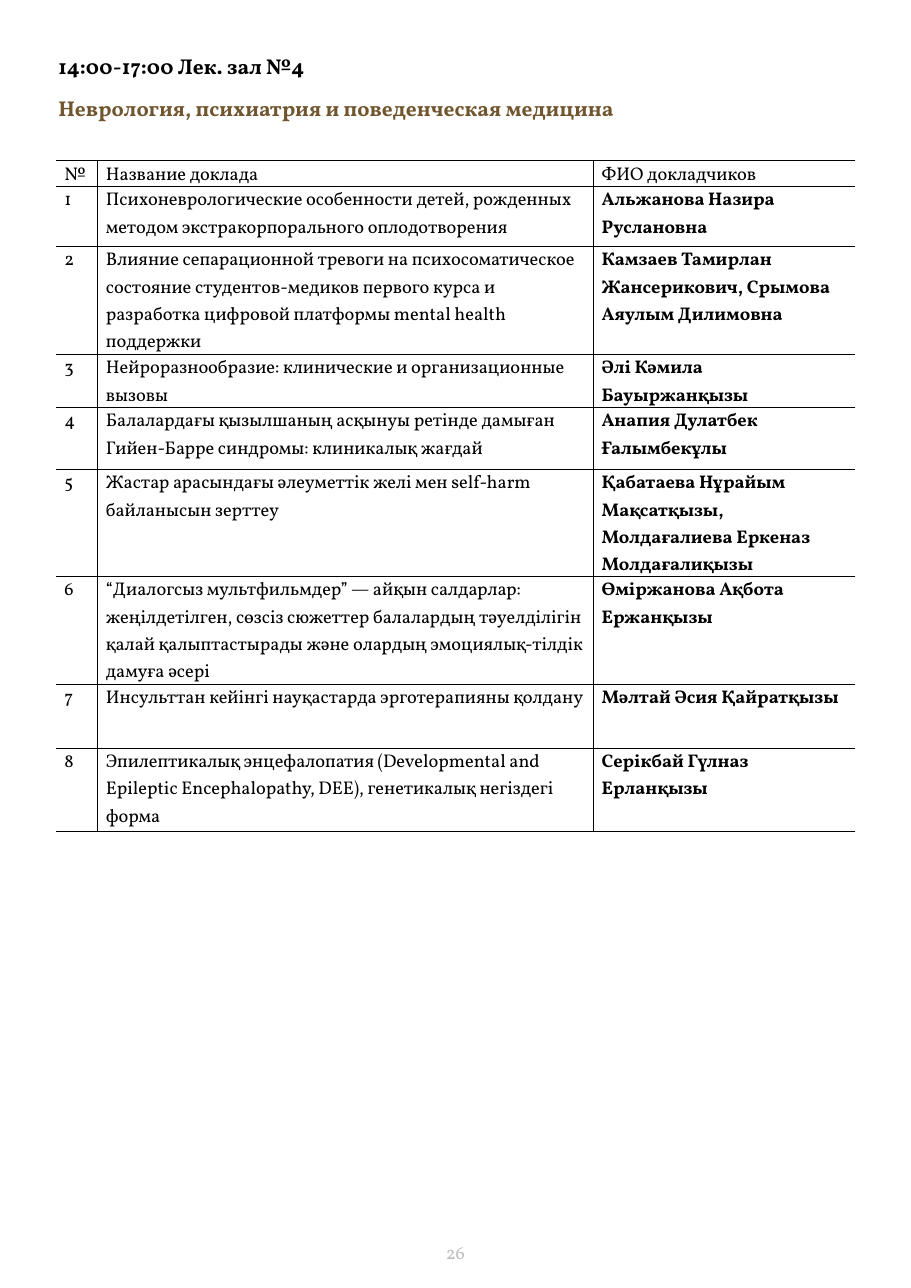
from dataclasses import dataclass

from lxml.etree import SubElement
from pptx import Presentation
from pptx.dml.color import RGBColor as Color
from pptx.enum.text import MSO_ANCHOR as Anchor, PP_ALIGN as Align
from pptx.oxml.ns import qn
from pptx.util import Pt


@dataclass(frozen=True)
class Theme:
    font: str = "Vollkorn"
    ink: str = "000000"
    paper: str = "FFFFFF"
    brown: str = "70552E"
    grey: str = "BFBFBF"
    heading_size: float = 14
    text_size: float = 12
    rule_width: float = 0.75
    hidden_width: float = 1


@dataclass(frozen=True)
class Talk:
    number: str
    topic: str
    speakers: str
    height: float


THEME = Theme()
LEFT, WIDTH, TABLE_TOP = 36.7, 522, 35.3
COLUMN_WIDTHS = [27.1, 324, 170.9]
SESSION_HEIGHT = 69.8

SESSION = [
    ("14:00-17:00 Лек. зал №4", THEME.ink),
    ("Неврология, психиатрия и поведенческая медицина", THEME.brown),
]
COLUMN_TITLES = Talk("№", "Название доклада", "ФИО докладчиков", 17)
TALKS = [
    Talk("1", "Психоневрологические особенности детей, рожденных методом "
         "экстракорпорального оплодотворения", "Альжанова Назира Руслановна", 39.2),
    Talk("2", "Влияние сепарационной тревоги на психосоматическое состояние "
         "студентов-медиков первого курса и разработка цифровой платформы mental health "
         "поддержки", "Камзаев Тамирлан Жансерикович, Срымова Аяулым Дилимовна", 70.6),
    Talk("3", "Нейроразнообразие: клинические и организационные вызовы",
         "Әлі Кәмила Бауыржанқызы", 34.6),
    Talk("4", "Балалардағы қызылшаның асқынуы ретінде дамыған Гийен-Барре синдромы: "
         "клиникалық жағдай", "Анапия Дулатбек Ғалымбекұлы", 40.5),
    Talk("5", "Жастар арасындағы әлеуметтік желі мен self-harm байланысын зерттеу",
         "Қабатаева Нұрайым Мақсатқызы, Молдағалиева Еркеназ Молдағалиқызы", 69.9),
    Talk("6", "“Диалогсыз мультфильмдер” — айқын салдарлар: жеңілдетілген, сөзсіз "
         "сюжеттер балалардың тәуелділігін қалай қалыптастырады және олардың "
         "эмоциялық-тілдік дамуға әсері", "Өміржанова Ақбота Ержанқызы", 70.6),
    Talk("7", "Инсульттан кейінгі науқастарда эрготерапияны қолдану",
         "Мәлтай Әсия Қайратқызы", 41.8),
    Talk("8", "Эпилептикалық энцефалопатия (Developmental and Epileptic "
         "Encephalopathy, DEE), генетикалық негіздегі форма",
         "Серікбай Гүлназ Ерланқызы", 54.2),
]


def apply(target, values: dict) -> None:
    for name, value in values.items():
        setattr(target, name, value)


def write(paragraph, text: str, size: float, color: str, bold: bool = False,
          **layout) -> None:
    apply(paragraph, layout)
    run = paragraph.add_run()
    run.text = text
    apply(run.font, {"name": THEME.font, "size": Pt(size), "bold": bold})
    run.font.color.rgb = Color.from_string(color)


def set_borders(cell, ruled_sides: str) -> None:
    """Rule the named sides in ink and hide the others."""
    properties = cell._tc.get_or_add_tcPr()
    for side in "LRTB":
        ruled = side in ruled_sides
        width = THEME.rule_width if ruled else THEME.hidden_width
        line = SubElement(properties, qn(f"a:ln{side}"), w=str(Pt(width)))
        fill = SubElement(line, qn("a:solidFill"))
        SubElement(fill, qn("a:srgbClr"), val=THEME.ink if ruled else THEME.paper)


def format_cell(cell, ruled_sides: str, side_margin: float) -> None:
    apply(cell, {"margin_left": Pt(side_margin), "margin_right": Pt(side_margin),
                 "margin_top": 0, "margin_bottom": 0, "vertical_anchor": Anchor.TOP})
    set_borders(cell, ruled_sides)
    cell.fill.background()


def add_programme(slide) -> None:
    rows = [COLUMN_TITLES, *TALKS]
    heights = [SESSION_HEIGHT, *(row.height for row in rows)]
    table = slide.shapes.add_table(
        len(heights), len(COLUMN_WIDTHS), Pt(LEFT), Pt(TABLE_TOP),
        Pt(WIDTH), Pt(sum(heights))).table
    apply(table, {"first_row": False, "horz_banding": False})
    for column, width in zip(table.columns, COLUMN_WIDTHS):
        column.width = Pt(width)
    for row, height in zip(table.rows, heights):
        row.height = Pt(height)

    # Session heading across all columns
    for cell in table.rows[0].cells:
        format_cell(cell, "B", 1.4)
    heading = table.cell(0, 0)
    heading.merge(table.cell(0, len(COLUMN_WIDTHS) - 1))
    frame = heading.text_frame
    write(frame.paragraphs[0], *SESSION[0][:1], THEME.heading_size, SESSION[0][1], True)
    for text, color in SESSION[1:]:
        write(frame.add_paragraph(), text, THEME.heading_size, color, True,
              space_before=Pt(8))

    # Column titles and talks, open at the outer sides
    for row_index, row in enumerate(rows, start=1):
        texts = (row.number, row.topic, row.speakers)
        for column_index, (text, sides) in enumerate(zip(texts, ("RTB", "LRTB", "LTB"))):
            cell = table.cell(row_index, column_index)
            format_cell(cell, sides, 5.4)
            is_speaker = column_index == 2 and row is not COLUMN_TITLES
            write(cell.text_frame.paragraphs[0], text, THEME.text_size, THEME.ink,
                  is_speaker, line_spacing=1.07)


def add_page_number(slide, number: str) -> None:
    frame = slide.shapes.add_textbox(Pt(LEFT), Pt(810), Pt(WIDTH), Pt(19.4)).text_frame
    apply(frame, {"word_wrap": True, "margin_left": Pt(7.2), "margin_right": Pt(7.2),
                  "margin_top": Pt(3.6), "margin_bottom": Pt(3.6)})
    write(frame.paragraphs[0], number, THEME.text_size, THEME.grey,
          alignment=Align.CENTER, line_spacing=0.85)


def main() -> None:
    presentation = Presentation()
    apply(presentation, {"slide_width": Pt(595.44), "slide_height": Pt(841.68)})
    slide = presentation.slides.add_slide(presentation.slide_layouts[6])
    add_page_number(slide, "26")
    add_programme(slide)
    presentation.save("out.pptx")


if __name__ == "__main__":
    main()
